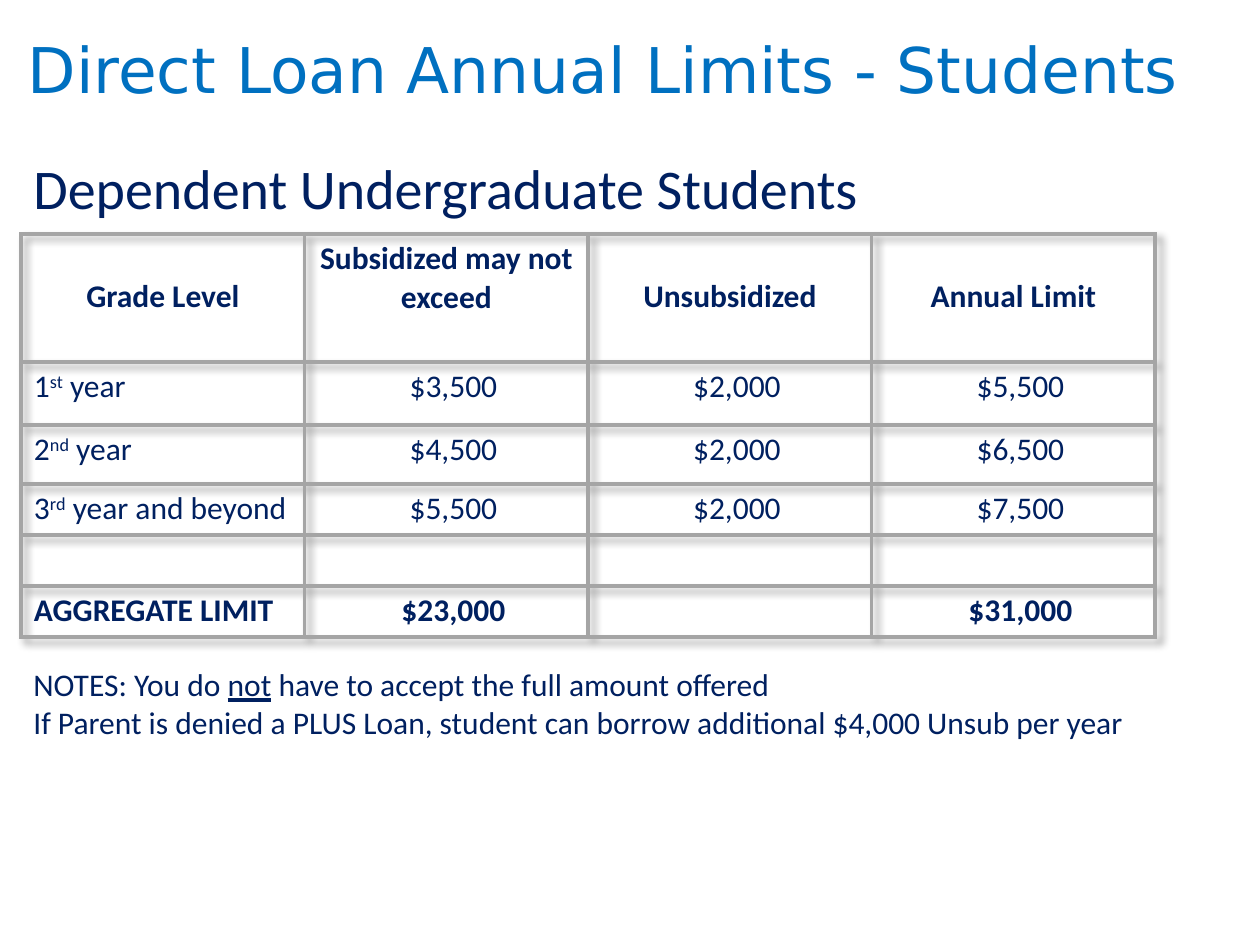
import pptx
import pptx.dml.color
import pptx.enum.text
import pptx.oxml
import pptx.oxml.ns
import pptx.util

RGB = pptx.dml.color.RGBColor
BLUE = RGB(0x00, 0x70, 0xC0)
NAVY = RGB(0x00, 0x20, 0x60)
GREY = RGB(0xA5, 0xA5, 0xA5)
ALIGN = pptx.enum.text.PP_ALIGN
ANCHOR = pptx.enum.text.MSO_ANCHOR
SPACE = pptx.oxml.ns.nsdecls("a")

COLS = [283.5] * 4
ROWS = [128, 63, 59, 51, 51, 51]
HEADS = ["Grade Level", "Subsidized may not exceed", "Unsubsidized", "Annual Limit"]
YEARS = [
    ("1", "st", " year", "$3,500", "$2,000", "$5,500"),
    ("2", "nd", " year", "$4,500", "$2,000", "$6,500"),
    ("3", "rd", " year and beyond", "$5,500", "$2,000", "$7,500"),
]
TOTAL = ["AGGREGATE LIMIT", "$23,000", "", "$31,000"]
NOTES = [
    [("NOTES: You do ", ""), ("not", "under"), (" have to accept the full amount offered", "")],
    [("If Parent is denied a PLUS Loan, student can borrow additional $4,000 Unsub per year", "")],
]


def px(num):
    return pptx.util.Emu(round(num * 914400 / 126))


class Deck:
    def __init__(self):
        self.show = pptx.Presentation()
        self.show.slide_width = px(1260)
        self.show.slide_height = px(945)
        self.slide = self.show.slides.add_slide(self.show.slide_layouts[5])
        self.font = "Calibri"

    def style(self, font, size=18, color=NAVY, name=None, bold=False):
        font.name = name or self.font
        font.size = pptx.util.Pt(size)
        font.color.rgb = color
        font.bold = bold

    def fill(self, para, parts, size=18, bold=False):
        for text, kind in parts:
            run = para.add_run()
            run.text = text
            self.style(run.font, size, bold=bold)
            if kind == "under":
                run.font.underline = True
            if kind == "super":
                run.font._element.set("baseline", "30000")

    def title(self, text, left, top, width, height):
        shape = self.slide.shapes.title
        shape.left, shape.top = px(left), px(top)
        shape.width, shape.height = px(width), px(height)
        frame = shape.text_frame
        frame.text = text
        frame.word_wrap = True
        frame.auto_size = pptx.enum.text.MSO_AUTO_SIZE.NONE
        frame.vertical_anchor = ANCHOR.MIDDLE
        para = frame.paragraphs[0]
        para.alignment = ALIGN.LEFT
        para.line_spacing = 0.9
        self.style(para.runs[0].font, 36, BLUE, "DejaVu Sans")

    def text(self, lines, left, top, width, height, size=18):
        box = self.slide.shapes.add_textbox(px(left), px(top), px(width), px(height))
        frame = box.text_frame
        frame.word_wrap = True
        for i, parts in enumerate(lines):
            para = frame.add_paragraph() if i else frame.paragraphs[0]
            self.fill(para, parts, size)

    def table(self, left, top):
        shape = self.slide.shapes.add_table(
            len(ROWS), len(COLS), px(left), px(top), px(sum(COLS)), px(sum(ROWS)))
        table = shape.table
        table.first_row = table.horz_banding = False
        table._tbl.tblPr.insert(0, pptx.oxml.parse_xml(
            f'<a:effectLst {SPACE}><a:outerShdw blurRad="50800" dist="50800" dir="2700000">'
            '<a:srgbClr val="000000"><a:alpha val="40000"/></a:srgbClr>'
            '</a:outerShdw></a:effectLst>'))
        for col, width in zip(table.columns, COLS):
            col.width = px(width)
        for row, height in zip(table.rows, ROWS):
            row.height = px(height)
        for cell in table.iter_cells():
            self.frame(cell)
        return table

    def frame(self, cell):
        props = cell._tc.get_or_add_tcPr()
        for side in ("lnL", "lnR", "lnT", "lnB"):
            props.append(pptx.oxml.parse_xml(
                f'<a:{side} {SPACE} w="28575"><a:solidFill><a:srgbClr val="{GREY}"/>'
                f'</a:solidFill></a:{side}>'))
        cell.fill.background()

    def cell(self, cell, parts, bold=False, center=True, indent=0, drop=0):
        para = cell.text_frame.paragraphs[0]
        para.alignment = ALIGN.CENTER if center else ALIGN.LEFT
        cell.margin_left = px(13 + indent)
        cell.margin_top = px(6 + drop)
        self.fill(para, parts, bold=bold)


def main():
    deck = Deck()
    deck.title("Direct Loan Annual Limits - Students", 15, 0, 1203, 147)
    deck.text([[("Dependent Undergraduate Students", "")]], 21, 147, 1218, 80, 32)
    table = deck.table(21, 234)
    for col, head in enumerate(HEADS):
        drop = 0 if col == 1 else 38
        deck.cell(table.cell(0, col), [(head, "")], bold=True, drop=drop)
    for row, (num, end, rest, *sums) in enumerate(YEARS, 1):
        parts = [(num, ""), (end, "super"), (rest, "")]
        deck.cell(table.cell(row, 0), parts, center=False)
        for col, value in enumerate(sums, 1):
            deck.cell(table.cell(row, col), [(value, "")], indent=14)
    for col, value in enumerate(TOTAL):
        if value:
            deck.cell(table.cell(5, col), [(value, "")], bold=True,
                      center=col > 0, indent=14 if col else 0)
    deck.text(NOTES, 21, 659, 1129, 89)
    deck.show.save("out.pptx")


if __name__ == "__main__":
    main()
